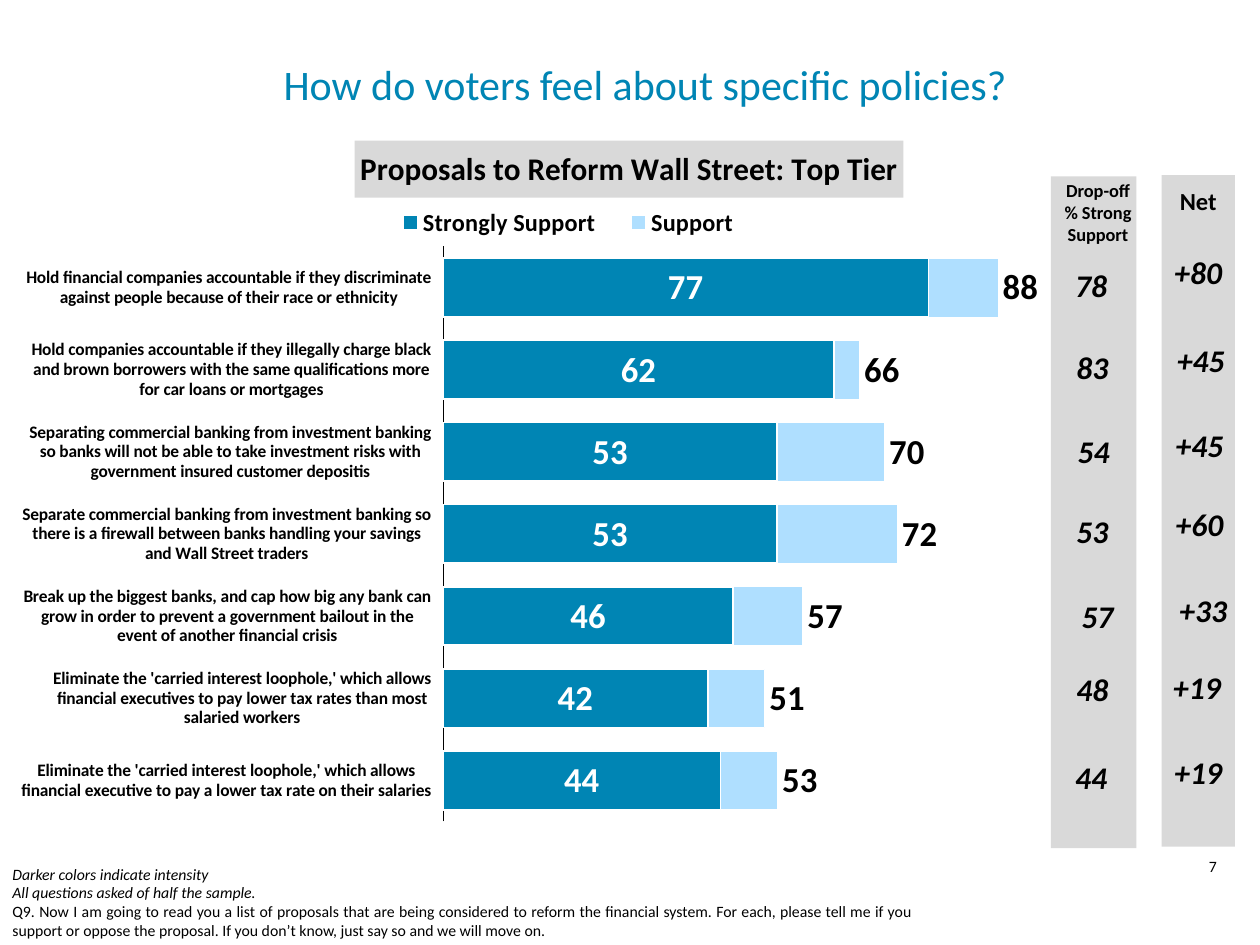
from copy import deepcopy

from lxml import etree
from pptx import Presentation
from pptx.chart.data import CategoryChartData
from pptx.dml.color import RGBColor
from pptx.enum.chart import (XL_CHART_TYPE, XL_LABEL_POSITION,
                             XL_LEGEND_POSITION, XL_TICK_LABEL_POSITION,
                             XL_TICK_MARK)
from pptx.enum.shapes import MSO_SHAPE
from pptx.enum.text import MSO_ANCHOR, PP_ALIGN
from pptx.oxml.ns import qn
from pptx.util import Inches, Pt

BAR = XL_CHART_TYPE.BAR_CLUSTERED
OUTSIDE, CENTRE = XL_LABEL_POSITION.OUTSIDE_END, XL_LABEL_POSITION.CENTER
TOP = XL_LEGEND_POSITION.TOP
LOW, NO_TICK = XL_TICK_LABEL_POSITION.LOW, XL_TICK_MARK.NONE
RECT = MSO_SHAPE.RECTANGLE
HIGH, MIDDLE = MSO_ANCHOR.TOP, MSO_ANCHOR.MIDDLE
MID, FULL = PP_ALIGN.CENTER, PP_ALIGN.JUSTIFY

WIDE, TALL = Inches(10), Inches(7.5)
COL, ROW = WIDE / 100, TALL / 100
FONT = "Calibri"
HUE = {"dark": "0085B4", "light": "AFDFFF", "gray": "D9D9D9",
       "ink": "000000", "paper": "FFFFFF"}

POLL = [
    ("Hold financial companies accountable if they discriminate against "
     "people because of their race or ethnicity", 88, 77),
    ("Hold companies accountable if they illegally charge black and brown "
     "borrowers with the same qualifications more for car loans or mortgages",
     66, 62),
    ("Separating commercial banking from investment banking so banks will not "
     "be able to take investment risks with government insured customer "
     "depositis", 70, 53),
    ("Separate commercial banking from investment banking so there is a "
     "firewall between banks handling your savings and Wall Street traders",
     72, 53),
    ("Break up the biggest banks, and cap how big any bank can grow in order "
     "to prevent a government bailout in the event of another financial "
     "crisis", 57, 46),
    ("Eliminate the 'carried interest loophole,' which allows financial "
     "executives to pay lower tax rates than most salaried workers", 51, 42),
    ("Eliminate the 'carried interest loophole,' which allows financial "
     "executive to pay a lower tax rate on their salaries", 53, 44),
]
# Each cell: text, columns and rows from the corner of its gray band
NET = [("+80", 0, 8.27), ("+45", 0.2, 17.6), ("+45", 0.1, 26.53),
       ("+60", 0.1, 34.93), ("+33", 0.4, 44), ("+19", -0.1, 52.13),
       ("+19", 0, 61.2)]
DROP = [("78", 0.3, 9.47), ("83", 0.4, 18.13), ("54", 0.5, 27.07),
        ("53", 0.4, 35.47), ("57", 0.8, 44.53), ("48", 0.4, 52.27),
        ("44", 0.3, 61.6)]
NOTES = [("Darker colors indicate intensity", True),
         ("All questions asked of half the sample.", True),
         ("Q9. Now I am going to read you a list of proposals that are being "
          "considered to reform the financial system. For each, please tell "
          "me if you support or oppose the proposal. If you don’t know, just "
          "say so and we will move on.", False)]


def rgb(name):
    return RGBColor.from_string(HUE[name])


def span(box):
    """Turn left, top, width, height in grid units into lengths."""
    x, y, w, h = box
    return [round(n) for n in (x * COL, y * ROW, w * COL, h * ROW)]


def style(font, size, color="ink", bold=False, slant=False):
    font.name, font.size = FONT, Pt(size)
    font.bold, font.italic = bold, slant
    font.color.rgb = rgb(color)


def write(shapes, box, lines, align=MID, anchor=HIGH, tight=False, **look):
    """Add a text box; a line is a string or a (string, slant) pair."""
    frame = shapes.add_textbox(*span(box)).text_frame
    frame.word_wrap, frame.vertical_anchor = True, anchor
    if tight:
        frame.margin_left = frame.margin_right = 0
        frame.margin_top = frame.margin_bottom = 0
    for i, line in enumerate(lines):
        text, slant = (line, False) if isinstance(line, str) else line
        para = frame.add_paragraph() if i else frame.paragraphs[0]
        para.alignment = align
        run = para.add_run()
        run.text = text
        style(run.font, **{"slant": slant, **look})


def place(node, index, **shares):
    """Fix a chart part at shares of the chart's size."""
    for old in node.findall(qn("c:layout")):
        node.remove(old)
    layout = etree.Element(qn("c:layout"))
    manual = etree.SubElement(layout, qn("c:manualLayout"))
    for tag, val in shares.items():
        etree.SubElement(manual, qn("c:" + tag)).set("val", str(val))
    node.insert(index, layout)


def split(area):
    """Move the second series to its own hidden pair of axes."""
    bars = area.find(qn("c:barChart"))
    twin = deepcopy(bars)
    bars.remove(bars.findall(qn("c:ser"))[1])
    twin.remove(twin.find(qn("c:ser")))
    bars.addnext(twin)
    axes = [area.find(qn(tag)) for tag in ("c:catAx", "c:valAx")]
    pairs = [deepcopy(axis) for axis in axes]
    for pair in pairs:
        pair.find(qn("c:delete")).set("val", "1")
    axes[1].addnext(pairs[1])
    pairs[1].addnext(pairs[0])
    ids = {axis.find(qn("c:axId")).get("val"): new
           for axis, new in zip(axes, ("5001", "5002"))}
    for part in [twin, *pairs]:
        for tag in ("c:axId", "c:crossAx"):
            for node in part.findall(qn(tag)):
                node.set("val", ids[node.get("val")])


def paint(series, fill, edge, ink, spot):
    series.format.fill.solid()
    series.format.fill.fore_color.rgb = rgb(fill)
    series.format.line.color.rgb = rgb("paper")
    series.format.line.width = Pt(edge)
    series.invert_if_negative = False
    tags = series.data_labels
    tags.show_value, tags.position = True, spot
    tags.number_format, tags.number_format_is_linked = "0", False
    style(tags.font, 20, ink, bold=True)


def graph(shapes, box):
    names, some, strong = zip(*POLL)
    data = CategoryChartData(number_format="0")
    data.categories = names
    data.add_series("Support", some)
    data.add_series("Strongly Support", strong)
    chart = shapes.add_chart(BAR, *span(box), data).chart
    style(chart.font, 11)

    plot = chart.plots[0]
    plot.gap_width, plot.overlap, plot.vary_by_categories = 40, 100, False
    paint(plot.series[0], "light", 0.25, "ink", OUTSIDE)
    paint(plot.series[1], "dark", 1.05, "paper", CENTRE)

    cat, val = chart.category_axis, chart.value_axis
    cat.reverse_order, cat.tick_label_position = True, LOW
    cat.major_tick_mark = cat.minor_tick_mark = NO_TICK
    cat.format.line.color.rgb = rgb("ink")
    cat.format.line.width = Pt(0.25)
    style(cat.tick_labels.font, 10, bold=True)
    val.minimum_scale, val.maximum_scale = 0, 100
    val.has_major_gridlines = val.visible = False

    title = chart.chart_title
    title.text_frame.text = "Proposals to Reform Wall Street: Top Tier"
    style(title.text_frame.paragraphs[0].runs[0].font, 18, bold=True)
    title.format.fill.solid()
    title.format.fill.fore_color.rgb = rgb("gray")
    place(title._element, 1, xMode="edge", yMode="edge", x=0.31, y=0.05)

    chart.has_legend = True
    key = chart.legend
    key.position, key.include_in_layout = TOP, False
    style(key.font, 14, bold=True)
    place(key._element, 1, xMode="edge", yMode="edge",
          x=0.33, y=0.13, w=0.37, h=0.06)

    area = chart._chartSpace.chart.plotArea
    place(area, 0, layoutTarget="inner", xMode="edge", yMode="edge",
          x=0.395, y=0.192, w=0.605, h=0.771)
    split(area)


def band(shapes, box, head, spot, size, cells):
    """Draw a gray column with its heading and its figures."""
    x, y = box[:2]
    back = shapes.add_shape(RECT, *span(box))
    back.shadow.inherit = False
    back.fill.solid()
    back.fill.fore_color.rgb = rgb("gray")
    back.line.fill.background()
    dx, dy, w, h = spot
    write(shapes, (x + dx, y + dy, w, h), head, tight=True, size=size,
          bold=True)
    for text, dx, dy in cells:
        write(shapes, (x + dx, y + dy, 5.8, 4), [text], tight=True, size=18,
              bold=True, slant=True)


def main():
    deck = Presentation()
    deck.slide_width, deck.slide_height = WIDE, TALL
    shapes = deck.slides.add_slide(deck.slide_layouts[6]).shapes
    write(shapes, (92.5, 90, 7.5, 4.4), ["7"], size=9)
    graph(shapes, (1.7, 10.93, 83.5, 78.93))
    write(shapes, (0, 90.8, 73.3, 9.2), NOTES, align=FULL, size=9)
    write(shapes, (4.1, 1.07, 94.2, 15.47),
          ["How do voters feel about specific policies?"],
          anchor=MIDDLE, size=24, color="dark")
    band(shapes.add_group_shape().shapes, (92.2, 18.53, 5.8, 71.07),
         ["Net"], (0, 1.2, 5.8, 3.2), 14, NET)
    band(shapes, (83.4, 18.67, 6.8, 71.07), ["Drop-off", "% Strong Support"],
         (0.1, 0.27, 7.3, 7.07), 10.5, DROP)
    deck.save("out.pptx")


if __name__ == "__main__":
    main()
